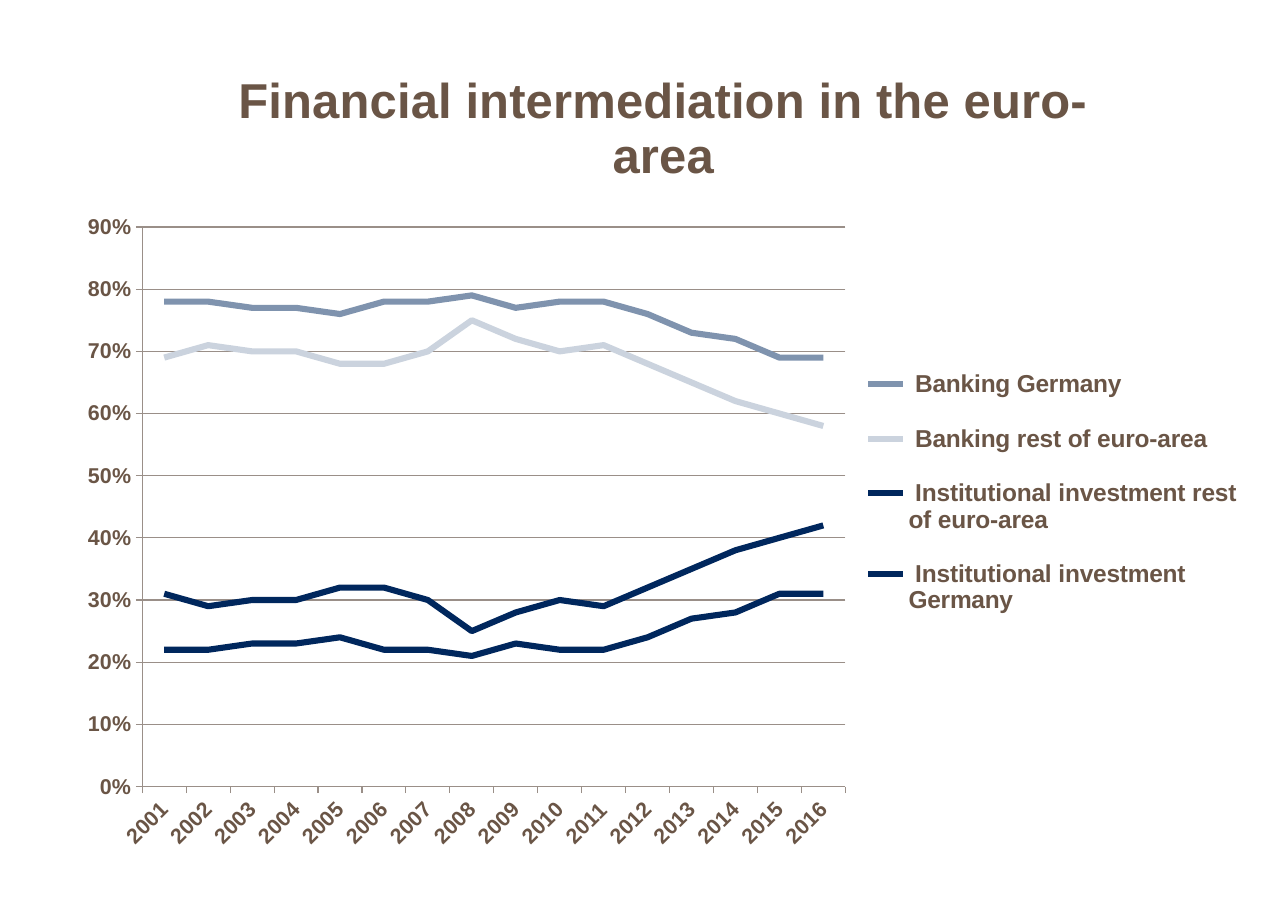
from dataclasses import dataclass

from lxml import etree
from pptx import Presentation
from pptx import util as u
from pptx.chart.chart import Chart
from pptx.chart.data import CategoryChartData
from pptx.dml.color import RGBColor
from pptx.enum import chart as ch
from pptx.oxml import ns

SLIDE_W, SLIDE_H = u.Inches(11.69), u.Inches(8.27)
FONT = "Arial"
BROWN = RGBColor(0x6A, 0x55, 0x46)
GREY = RGBColor(0x9A, 0x8F, 0x88)
STEEL = RGBColor(0x7F, 0x93, 0xAE)
PALE = RGBColor(0xCB, 0xD3, 0xDE)
NAVY = RGBColor(0x00, 0x27, 0x5D)
YEARS = [str(year) for year in range(2001, 2017)]
TITLE = "Financial intermediation in the euro-area"


@dataclass(frozen=True)
class Box:
    """Place and size as shares of the surrounding area."""
    x: float
    y: float
    w: float
    h: float


@dataclass(frozen=True)
class Line:
    """One series, with its yearly values in per cent."""
    name: str
    color: RGBColor
    percents: tuple[int, ...]


CHART = Box(0.05, 0.04, 0.93, 0.91)
PLOT = Box(0.065, 0.23, 0.587, 0.675)
LEGEND = Box(0.665, 0.37, 0.32, 0.36)

LINES = [
    Line(" Banking Germany", STEEL,
         (78, 78, 77, 77, 76, 78, 78, 79, 77, 78, 78, 76, 73, 72, 69, 69)),
    Line(" Banking rest of euro-area", PALE,
         (69, 71, 70, 70, 68, 68, 70, 75, 72, 70, 71, 68, 65, 62, 60, 58)),
    Line(" Institutional investment rest of euro-area", NAVY,
         (31, 29, 30, 30, 32, 32, 30, 25, 28, 30, 29, 32, 35, 38, 40, 42)),
    Line(" Institutional investment Germany", NAVY,
         (22, 22, 23, 23, 24, 22, 22, 21, 23, 22, 22, 24, 27, 28, 31, 31)),
]


def set_font(font, size: int) -> None:
    font.name, font.size, font.bold = FONT, u.Pt(size), True
    font.color.rgb = BROWN


def set_line(line, color: RGBColor, width: float) -> None:
    line.color.rgb = color
    line.width = u.Pt(width)


def set_layout(parent, index: int, box: Box, inner: bool = False) -> None:
    """Fix the place of a chart part; index is where its layout belongs."""
    for old in parent.findall(ns.qn("c:layout")):
        parent.remove(old)
    layout = etree.Element(ns.qn("c:layout"))
    manual = etree.SubElement(layout, ns.qn("c:manualLayout"))
    values = [("layoutTarget", "inner")] if inner else []
    values += [("xMode", "edge"), ("yMode", "edge")]
    values += [(key, str(getattr(box, key))) for key in "xywh"]
    for tag, value in values:
        etree.SubElement(manual, ns.qn(f"c:{tag}")).set("val", value)
    parent.insert(index, layout)


def add_line_chart(sp_tree) -> Chart:
    data = CategoryChartData(number_format="0%")
    data.categories = YEARS
    for line in LINES:
        data.add_series(line.name, [p / 100 for p in line.percents])
    frame = sp_tree.add_chart(
        ch.XL_CHART_TYPE.LINE,
        int(SLIDE_W * CHART.x), int(SLIDE_H * CHART.y),
        int(SLIDE_W * CHART.w), int(SLIDE_H * CHART.h), data)
    chart = frame.chart
    set_font(chart.font, 14)
    chart.plots[0].vary_by_categories = False
    for series, line in zip(chart.plots[0].series, LINES):
        series.smooth = False
        series.marker.style = ch.XL_MARKER_STYLE.NONE
        set_line(series.format.line, line.color, 4)
    return chart


def style_axes(chart: Chart) -> None:
    years, shares = chart.category_axis, chart.value_axis
    for axis in (years, shares):
        axis.major_tick_mark = ch.XL_TICK_MARK.OUTSIDE
        axis.minor_tick_mark = ch.XL_TICK_MARK.NONE
        set_font(axis.tick_labels.font, 14)
        set_line(axis.format.line, GREY, 0.75)
    body = years._element.find(f"{ns.qn('c:txPr')}/{ns.qn('a:bodyPr')}")
    body.set("rot", str(-45 * 60000))
    shares.minimum_scale, shares.maximum_scale = 0, 0.9
    shares.major_unit = 0.1
    shares.has_major_gridlines = True
    set_line(shares.major_gridlines.format.line, GREY, 0.75)
    shares.tick_labels.number_format = "0%"
    shares.tick_labels.number_format_is_linked = False


def add_title(chart: Chart) -> None:
    chart.has_title = True
    r = chart.chart_title.text_frame.paragraphs[0].add_run()
    r.text = TITLE
    set_font(r.font, 32)
    chart.chart_title.include_in_layout = False


def add_legend(chart: Chart) -> None:
    chart.has_legend = True
    legend = chart.legend
    legend.position = ch.XL_LEGEND_POSITION.RIGHT
    legend.include_in_layout = False
    set_font(legend.font, 16)
    set_layout(legend._element, 1, LEGEND)


def main() -> None:
    prs = Presentation()
    prs.slide_width, prs.slide_height = SLIDE_W, SLIDE_H
    s = prs.slides.add_slide(prs.slide_layouts[6])
    chart = add_line_chart(s.shapes)
    style_axes(chart)
    add_title(chart)
    add_legend(chart)
    set_layout(chart._chartSpace.chart.plotArea, 0, PLOT, inner=True)
    prs.save("out.pptx")


if __name__ == "__main__":
    main()
